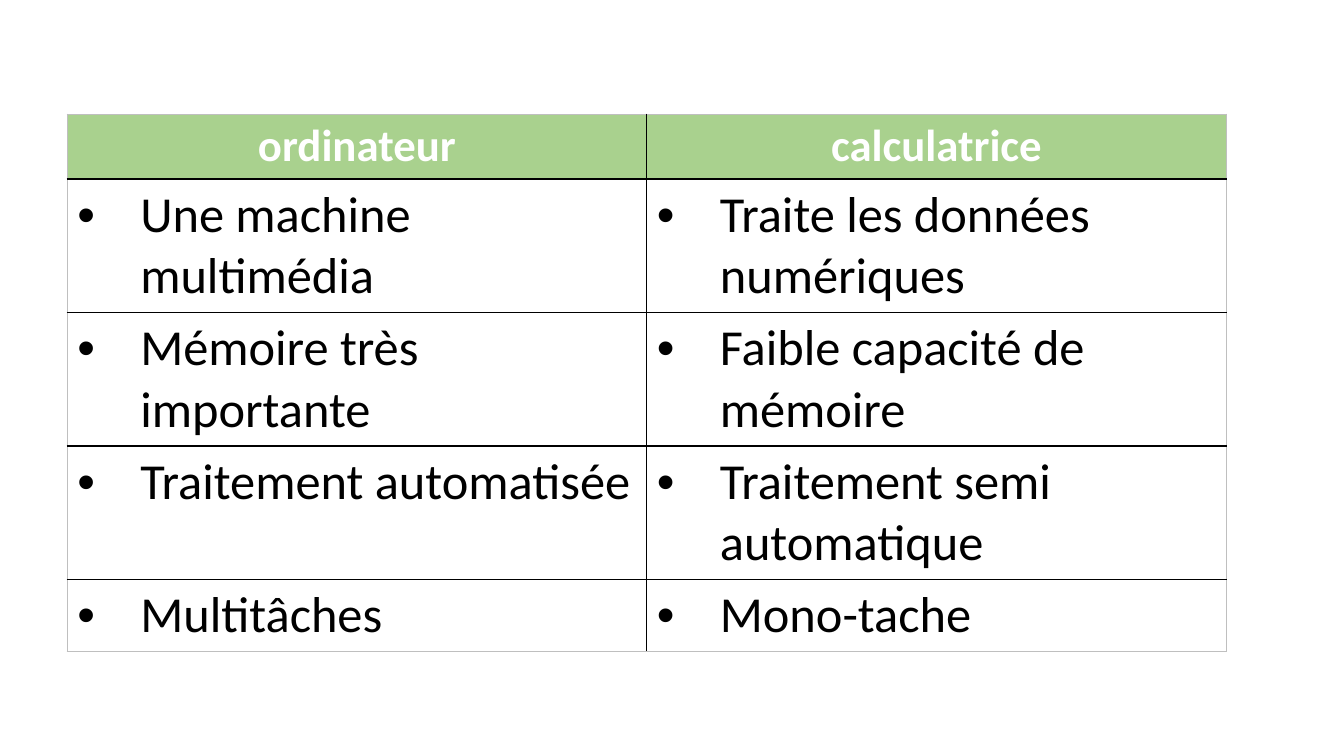
from dataclasses import dataclass

from lxml import etree
from pptx import Presentation
from pptx.dml.color import RGBColor
from pptx.enum.text import PP_ALIGN
from pptx.oxml.ns import qn
from pptx.util import Pt

CENTER, LEFT = PP_ALIGN.CENTER, PP_ALIGN.LEFT


@dataclass(frozen=True)
class Theme:
    """Colours, font and sizes of the slide."""
    font: str = "Calibri"
    header_fill: str = "A9D18E"
    header_text: str = "FFFFFF"
    body_text: str = "000000"
    grid: str = "000000"
    outline: str = "BFBFBF"
    header_size: float = 32
    body_size: float = 36
    grid_width: float = 1
    outline_width: float = 0.75
    bullet_indent: float = 45


THEME = Theme()
COMPARISON = [
    ("ordinateur", "calculatrice"),
    ("Une machine multimédia", "Traite les données numériques"),
    ("Mémoire très importante", "Faible capacité de mémoire"),
    ("Traitement automatisée", "Traitement semi automatique"),
    ("Multitâches", "Mono-tache"),
]
ROW_HEIGHTS = [46.4, 95.3, 95.3, 95.3, 51.3]


def write(frame, text, *, size, color, bold=False, align=LEFT, bullet=False):
    """Write one formatted paragraph into a text frame."""
    paragraph = frame.paragraphs[0]
    paragraph.alignment = align
    run = paragraph.add_run()
    run.text = text
    run.font.name = THEME.font
    run.font.size = Pt(size)
    run.font.bold = bold
    run.font.color.rgb = RGBColor.from_string(color)
    if bullet:
        properties = paragraph._p.get_or_add_pPr()
        properties.set("marL", str(Pt(THEME.bullet_indent)))
        properties.set("indent", str(-Pt(THEME.bullet_indent)))
        etree.SubElement(properties, qn("a:buFont")).set("typeface", "Arial")
        etree.SubElement(properties, qn("a:buChar")).set("char", "•")


def draw_borders(cell, outer_edges):
    """Rule the four sides of a cell, lighter along the table's outline."""
    properties = cell._tc.get_or_add_tcPr()
    for position, edge in enumerate(("lnL", "lnR", "lnT", "lnB")):
        outer = edge in outer_edges
        width = THEME.outline_width if outer else THEME.grid_width
        line = etree.Element(qn(f"a:{edge}"), w=str(Pt(width)))
        fill = etree.SubElement(line, qn("a:solidFill"))
        color = etree.SubElement(fill, qn("a:srgbClr"))
        color.set("val", THEME.outline if outer else THEME.grid)
        properties.insert(position, line)


def add_comparison(slide, left, top, width):
    """Place the comparison table at the given corner and width."""
    rows, columns = len(COMPARISON), len(COMPARISON[0])
    table = slide.shapes.add_table(rows, columns, Pt(left), Pt(top),
                                   Pt(width), Pt(sum(ROW_HEIGHTS))).table
    table.horz_banding = False
    for column in table.columns:
        column.width = Pt(width / columns)
    for r, (height, entries) in enumerate(zip(ROW_HEIGHTS, COMPARISON)):
        table.rows[r].height = Pt(height)
        for c, entry in enumerate(entries):
            cell = table.cell(r, c)
            if r == 0:
                cell.fill.solid()
                cell.fill.fore_color.rgb = RGBColor.from_string(THEME.header_fill)
                write(cell.text_frame, entry, size=THEME.header_size,
                      color=THEME.header_text, bold=True, align=CENTER)
            else:
                cell.fill.background()
                write(cell.text_frame, entry, size=THEME.body_size,
                      color=THEME.body_text, bullet=True)
            sides = {"lnL": c == 0, "lnR": c == columns - 1,
                     "lnT": r == 0, "lnB": r == rows - 1}
            draw_borders(cell, {edge for edge, outer in sides.items() if outer})


def main():
    """Build and save the slide."""
    deck = Presentation()
    deck.slide_width, deck.slide_height = Pt(960), Pt(540)
    slide = deck.slides.add_slide(deck.slide_layouts[6])
    add_comparison(slide, left=48, top=81.5, width=828)
    deck.save("out.pptx")


if __name__ == "__main__":
    main()
